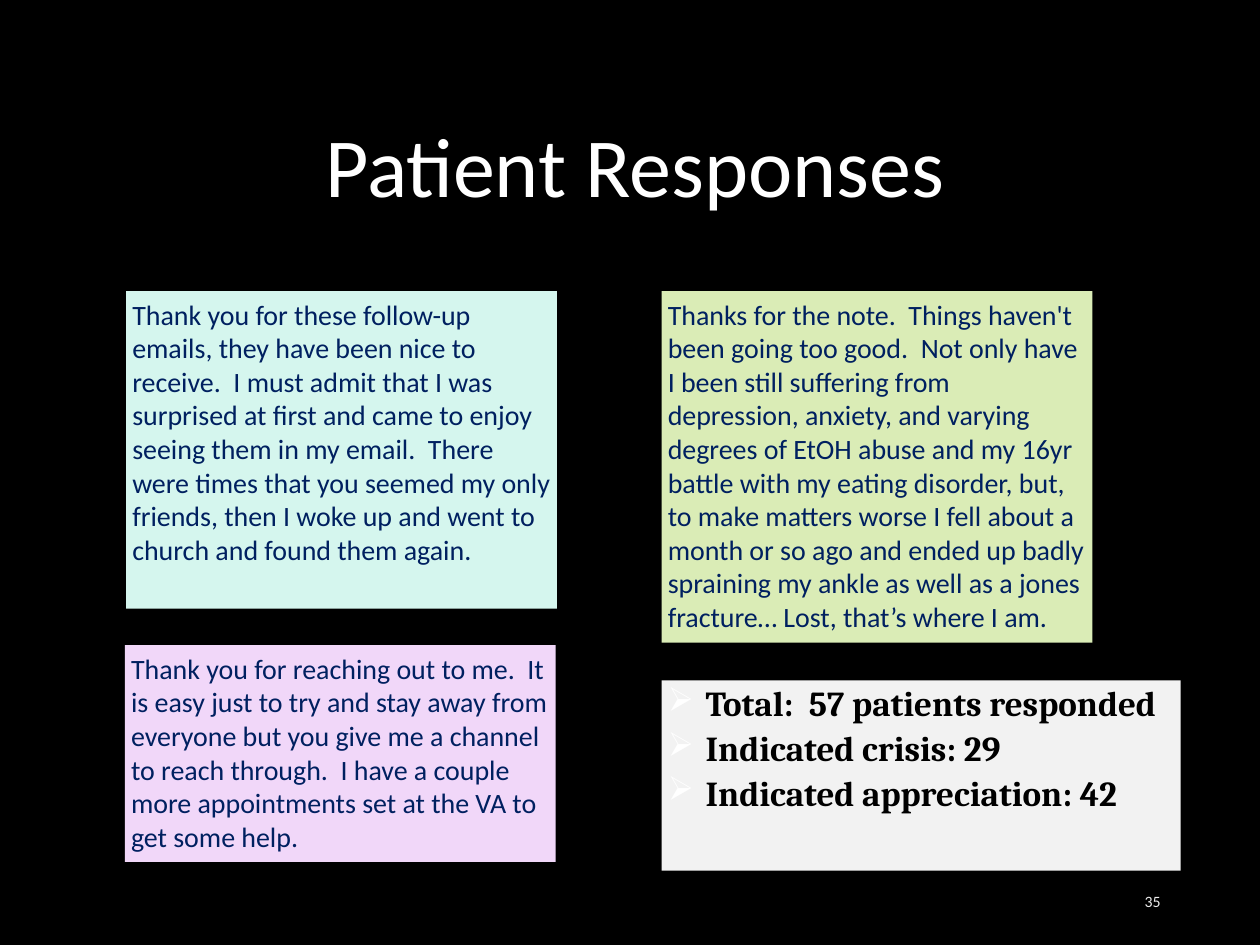
"""Build the Patient Responses slide with three quotes and a summary."""
from lxml import etree
from pptx import Presentation
from pptx.dml.color import RGBColor
from pptx.enum import shapes, text
from pptx.oxml import ns
from pptx.util import Inches, Pt

BLACK = RGBColor(0x00, 0x00, 0x00)
WHITE = RGBColor(0xFF, 0xFF, 0xFF)
NAVY = RGBColor(0x00, 0x20, 0x60)
GREY = RGBColor(0xF2, 0xF2, 0xF2)
SILVER = RGBColor(0xED, 0xED, 0xED)
MINT = RGBColor(0xD5, 0xF6, 0xEE)
LIME = RGBColor(0xDA, 0xEC, 0xB6)
LILAC = RGBColor(0xF1, 0xD7, 0xF9)


def add_bullet(paragraph, symbol, color):
    properties = paragraph._p.get_or_add_pPr()
    properties.set("marL", str(Inches(0.3)))
    properties.set("indent", str(-Inches(0.3)))
    bullet_color = etree.SubElement(properties, ns.qn("a:buClr"))
    etree.SubElement(bullet_color, ns.qn("a:srgbClr"), val=str(color))
    etree.SubElement(properties, ns.qn("a:buSzPct"), val="95000")
    etree.SubElement(properties, ns.qn("a:buChar"), char=symbol)


def add_text(slide, lines, box, size, color, fill=None, font="Calibri", bold=False,
             align=text.PP_ALIGN.LEFT, anchor=text.MSO_ANCHOR.TOP,
             spacing=None, before=0, bullet=None, grow=False):
    position = [Inches(value) for value in box]
    if fill is None:
        shape = slide.shapes.add_textbox(*position)
    else:
        shape = slide.shapes.add_shape(shapes.MSO_SHAPE.RECTANGLE, *position)
        shape.shadow.inherit = False
        shape.fill.solid()
        shape.fill.fore_color.rgb = fill
        shape.line.fill.background()
    frame = shape.text_frame
    frame.word_wrap = True
    frame.vertical_anchor = anchor
    if grow:
        frame.auto_size = text.MSO_AUTO_SIZE.SHAPE_TO_FIT_TEXT
    if fill is not None:
        frame.margin_left = frame.margin_right = Inches(0.05)
    frame.text = "\n".join(lines)
    for index, paragraph in enumerate(frame.paragraphs):
        if bullet:
            add_bullet(paragraph, bullet, WHITE)
        paragraph.alignment = align
        if spacing:
            paragraph.line_spacing = spacing
        if before and index:
            paragraph.space_before = Pt(before)
        paragraph.font.name = font
        paragraph.font.size = Pt(size)
        paragraph.font.bold = bold
        paragraph.font.color.rgb = color


presentation = Presentation()
presentation.slide_width = Inches(10)
presentation.slide_height = Inches(7.5)
slide = presentation.slides.add_slide(presentation.slide_layouts[6])
slide.background.fill.solid()
slide.background.fill.fore_color.rgb = BLACK

add_text(slide, ["Patient Responses"], (0.54, 0.73, 9, 1.25), 48, WHITE,
         align=text.PP_ALIGN.CENTER, anchor=text.MSO_ANCHOR.MIDDLE, spacing=0.9)

summary = [
    "Total:  57 patients responded",
    "Indicated crisis: 29",
    "Indicated appreciation: 42",
]
add_text(slide, summary, (5.25, 5.4, 4.12, 1.51), 20, BLACK, fill=GREY,
         font="Cambria", bold=True, spacing=0.9, before=4, bullet="➢")

quotes = [
    ((1, 2.31, 3.42, 2.52), MINT,
     "Thank you for these follow-up emails, they have been nice to receive.  I must admit "
     "that I was surprised at first and came to enjoy seeing them in my email.  There were "
     "times that you seemed my only friends, then I woke up and went to church and found "
     "them again."),
    ((5.25, 2.31, 3.42, 2.79), LIME,
     "Thanks for the note.  Things haven't been going too good.  Not only have I been still "
     "suffering from depression, anxiety, and varying degrees of EtOH abuse and my 16yr "
     "battle with my eating disorder, but, to make matters worse I fell about a month or so "
     "ago and ended up badly spraining my ankle as well as a jones fracture… Lost, that’s "
     "where I am."),
    ((0.99, 5.12, 3.42, 1.72), LILAC,
     "Thank you for reaching out to me.  It is easy just to try and stay away from everyone "
     "but you give me a channel to reach through.  I have a couple more appointments set at "
     "the VA to get some help."),
]
for box, fill, quote in quotes:
    add_text(slide, [quote], box, 16, NAVY, fill=fill, grow=True)

add_text(slide, ["35"], (7.06, 6.95, 2.25, 0.4), 9, SILVER,
         align=text.PP_ALIGN.RIGHT, anchor=text.MSO_ANCHOR.MIDDLE)

presentation.save("out.pptx")
